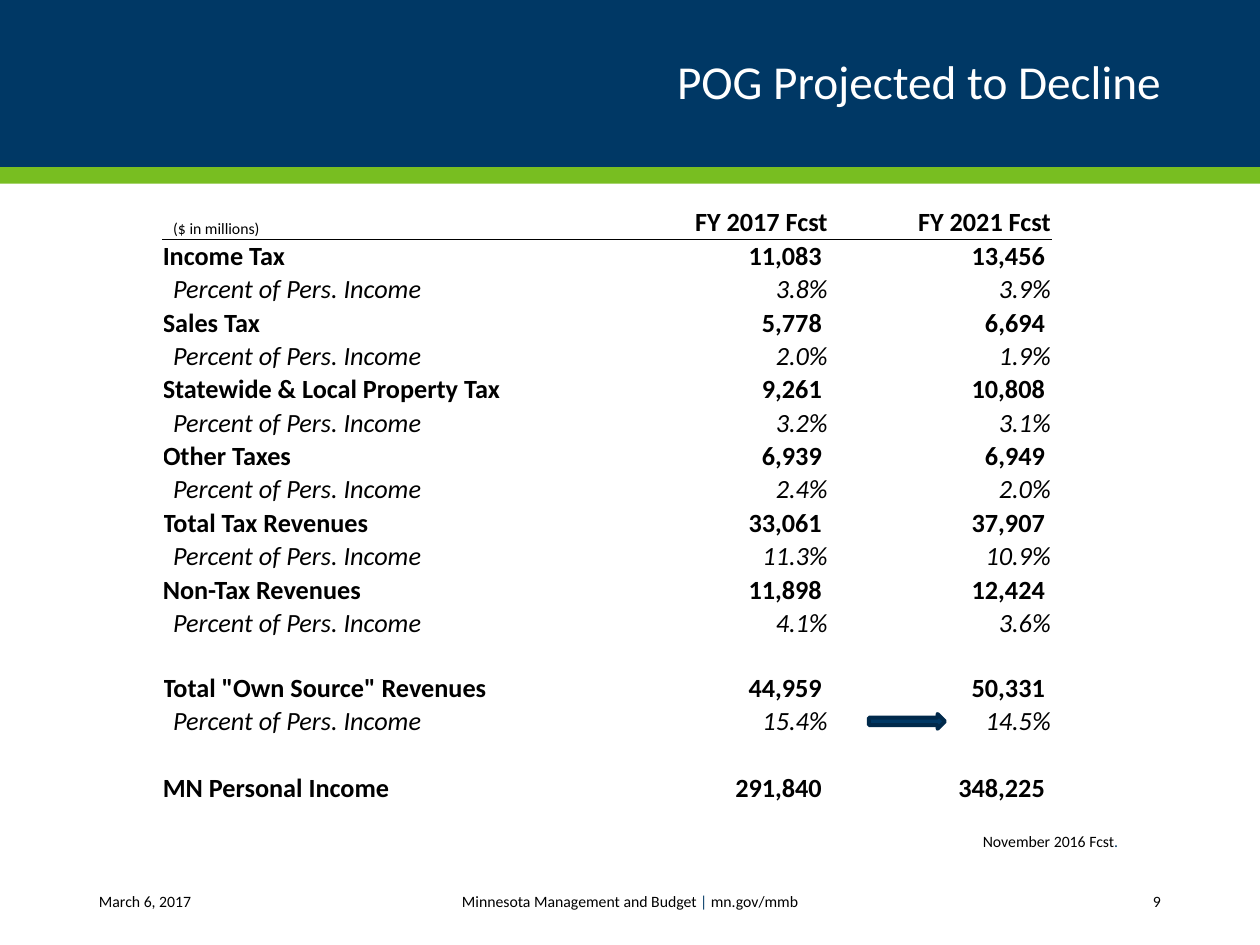
from lxml.etree import SubElement as Sub
from pptx import Presentation
from pptx.dml.color import RGBColor
from pptx.enum.shapes import MSO_SHAPE as SHAPE
from pptx.enum.text import MSO_ANCHOR as ANCHOR, PP_ALIGN as ALIGN
from pptx.oxml.ns import qn
from pptx.util import Pt

HUES = {"navy": "003865", "green": "78BE21", "edge": "00294B",
        "black": "000000", "white": "FFFFFF"}
SHARE = "Percent of Pers. Income"
HEAD = ("($ in millions)", "FY 2017 Fcst", "FY 2021 Fcst")
ROWS = [
    ("Income Tax", "11,083", "13,456"),
    (SHARE, "3.8%", "3.9%"),
    ("Sales Tax", "5,778", "6,694"),
    (SHARE, "2.0%", "1.9%"),
    ("Statewide & Local Property Tax", "9,261", "10,808"),
    (SHARE, "3.2%", "3.1%"),
    ("Other Taxes", "6,939", "6,949"),
    (SHARE, "2.4%", "2.0%"),
    ("Total Tax Revenues", "33,061", "37,907"),
    (SHARE, "11.3%", "10.9%"),
    ("Non-Tax Revenues", "11,898", "12,424"),
    (SHARE, "4.1%", "3.6%"),
    None,
    ('Total "Own Source" Revenues', "44,959", "50,331"),
    (SHARE, "15.4%", "14.5%"),
    None,
    ("MN Personal Income", "291,840", "348,225"),
]


def hue(name):
    return RGBColor.from_string(HUES[name])


def write(frame, *parts, size=9, bold=False, italic=False, align=ALIGN.LEFT,
          color="black", lead=None):
    """Fill a text frame; a part is a string or a (string, colour) pair."""
    para = frame.paragraphs[0]
    para.alignment = align
    if lead:
        para.line_spacing = lead
    for part in parts:
        words, tint = (part, color) if isinstance(part, str) else part
        run = para.add_run()
        run.text = words
        font = run.font
        font.name, font.size = "Calibri", Pt(size)
        font.bold, font.italic = bold, italic
        font.color.rgb = hue(tint)


def label(slide, box, *parts, anchor=ANCHOR.MIDDLE, wrap=True, **style):
    frame = slide.shapes.add_textbox(*map(Pt, box)).text_frame
    frame.word_wrap = wrap
    frame.vertical_anchor = anchor
    write(frame, *parts, **style)


def block(slide, kind, box, fill, edge=None):
    shape = slide.shapes.add_shape(kind, *map(Pt, box))
    shape.shadow.inherit = False
    shape.fill.solid()
    shape.fill.fore_color.rgb = hue(fill)
    if edge:
        shape.line.color.rgb = hue(edge)
        shape.line.width = Pt(2.25)
    else:
        shape.line.fill.background()


def header(slide, box):
    x, y, w, h = box
    band = 9.5
    block(slide, SHAPE.RECTANGLE, (x, y, w, h - band), "navy")
    block(slide, SHAPE.RECTANGLE, (x, y + h - band, w, band), "green")
    label(slide, (x + 49.5, y + 12, w - 99, 72), "POG Projected to Decline",
          size=27, color="white", align=ALIGN.RIGHT, lead=0.9)


def rule(cell, side):
    line = Sub(cell._tc.get_or_add_tcPr(), qn("a:" + side), w="6350")
    fill = Sub(line, qn("a:solidFill"))
    Sub(fill, qn("a:srgbClr"), val=HUES["black"])


def put(cell, words, left=0, right=0, **style):
    cell.margin_left, cell.margin_right = Pt(left), Pt(right)
    cell.margin_top = cell.margin_bottom = 0
    cell.vertical_anchor = ANCHOR.BOTTOM
    if words:
        write(cell.text_frame, words, **style)
    else:
        cell.text_frame.paragraphs[0]._p.get_or_add_endParaRPr().set("sz", "900")


def revenue(slide, box):
    x, y, w, h = box
    rows = [HEAD, *ROWS]
    table = slide.shapes.add_table(len(rows), 4, *map(Pt, box)).table
    table.first_row = table.horz_banding = False
    for col, width in zip(table.columns, (252, 128, 21.5, w - 401.5)):
        col.width = Pt(width)
    for r, row in enumerate(rows):
        table.rows[r].height = Pt(18 if r == 13 else (h - 18) / (len(rows) - 1))
        name, old, new = row or ("", "", "")
        head, share = r == 0, name == SHARE
        for c, words in enumerate((name, old, "", new)):
            cell = table.cell(r, c)
            if c == 0:
                put(cell, words, left=6 if head or share else 0,
                    size=9 if head else 15, bold=not (head or share), italic=share)
            else:
                put(cell, words, right=0 if head or share else 3.4, size=15,
                    bold=not share, italic=share, align=ALIGN.RIGHT)
            if r < 2:
                rule(cell, "lnT" if r else "lnB")
            cell.fill.background()


def footer(slide, box):
    x, y, w, h = box
    label(slide, (x, y, 80, h), "March 6, 2017")
    label(slide, (x + (w - 330) / 2, y, 330, h), "Minnesota Management and Budget ",
          ("|", "navy"), " mn.gov/mmb", align=ALIGN.CENTER)
    label(slide, (x + w - 86.5, y, 86.5, h), "9", align=ALIGN.RIGHT)


def main():
    deck = Presentation()
    deck.slide_width, deck.slide_height = Pt(720), Pt(540)
    slide = deck.slides.add_slide(deck.slide_layouts[6])
    header(slide, (0, 0, 720, 105))
    footer(slide, (49.5, 500.5, 621, 28.5))
    revenue(slide, (93, 117.5, 507.5, 342.7))
    block(slide, SHAPE.RIGHT_ARROW, (496.5, 408, 43.5, 8.5), "navy", "edge")
    label(slide, (554.5, 471.5, 93, 18), "November 2016 Fcst", (".", "navy"),
          anchor=ANCHOR.TOP, wrap=False)
    deck.save("out.pptx")


if __name__ == "__main__":
    main()
